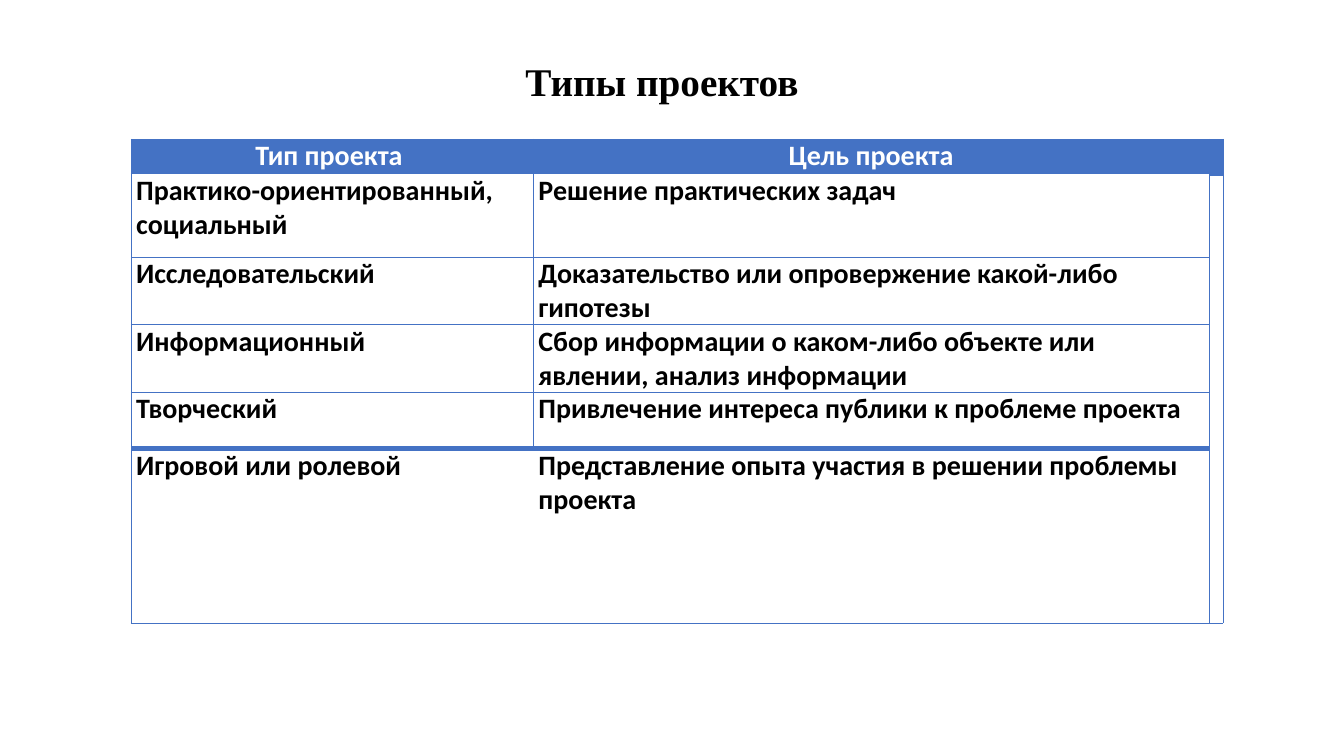
from dataclasses import dataclass

from lxml import etree
from pptx import Presentation, util as u
from pptx.dml.color import RGBColor
from pptx.enum import text
from pptx.oxml import ns


@dataclass(frozen=True)
class Theme:
    blue: str = "4472C4"
    white: str = "FFFFFF"
    black: str = "000000"
    head: str = "Times New Roman"
    body: str = "Calibri"
    big: int = 28
    small: int = 20
    thin: float = 0.5
    thick: float = 4


THEME = Theme()
WIDE, HIGH = 13.33, 7.5
COLS = (3.99, 6.7, 0.14)
ROWS = (0.34, 0.83, 0.67, 0.67, 0.56, 1.73)
TYPES = (
    ("Тип проекта ", "Цель проекта"),
    ("Практико-ориентированный, социальный", "Решение практических задач"),
    ("Исследовательский", "Доказательство или опровержение какой-либо гипотезы"),
    ("Информационный",
     "Сбор информации о каком-либо объекте или явлении, анализ информации"),
    ("Творческий", "Привлечение интереса публики к проблеме проекта"),
    ("Игровой или ролевой",
     "Представление опыта участия в решении проблемы проекта"),
)


def style(para, font, size, color, align):
    para.alignment = align
    for run in para.runs:
        run.font.name = font
        run.font.size = u.Pt(size)
        run.font.bold = True
        run.font.color.rgb = RGBColor.from_string(color)


def edge(cell, **sides):
    """Draw cell borders; a width of 0 hides that side."""
    props = cell._tc.get_or_add_tcPr()
    for spot, side in enumerate("LRTB"):
        width = sides.get(side, THEME.thin)
        line = etree.Element(ns.qn(f"a:ln{side}"), w=str(u.Pt(width)))
        if width:
            fill = etree.SubElement(line, ns.qn("a:solidFill"))
            etree.SubElement(fill, ns.qn("a:srgbClr"), val=THEME.blue)
        else:
            etree.SubElement(line, ns.qn("a:noFill"))
        props.insert(spot, line)


def title(slide, box):
    shape = slide.shapes.add_textbox(*map(u.Inches, box))
    frame = shape.text_frame
    frame.word_wrap = True
    frame.margin_left = u.Inches(0.6)
    frame.margin_top = u.Inches(0.37)
    frame.text = "Типы проектов"
    para = frame.paragraphs[0]
    para.line_spacing = 1.07
    style(para, THEME.head, THEME.big, THEME.black, text.PP_ALIGN.CENTER)


def paint(cell, top):
    cell.margin_left = cell.margin_right = u.Inches(0.05)
    cell.margin_top = cell.margin_bottom = 0
    if top:
        cell.fill.solid()
        cell.fill.fore_color.rgb = RGBColor.from_string(THEME.blue)
    else:
        cell.fill.background()


def grid(slide, box):
    frame = slide.shapes.add_table(len(ROWS), len(COLS), *map(u.Inches, box))
    table = frame.table
    table.horz_banding = False
    for col, size in zip(table.columns, COLS):
        col.width = u.Inches(size)
    for row, size in zip(table.rows, ROWS):
        row.height = u.Inches(size)

    last = len(ROWS) - 1
    for r, words in enumerate(TYPES):
        for c in range(len(COLS)):
            cell = table.cell(r, c)
            paint(cell, r == 0)
            sides = {}
            if r == last and c < 2:
                sides = {"T": THEME.thick, "R" if c == 0 else "L": 0}
            elif r == last - 1 and c < 2:
                sides = {"B": THEME.thick}
            elif r == 1 and c == 2:
                sides = {"T": THEME.thick}
            edge(cell, **sides)
            if c < len(words):
                cell.text_frame.text = words[c]
                color = THEME.black if r else THEME.white
                align = text.PP_ALIGN.LEFT if r else text.PP_ALIGN.CENTER
                style(cell.text_frame.paragraphs[0], THEME.body, THEME.small,
                      color, align)
    table.cell(1, 2).merge(table.cell(last, 2))


def main():
    deck = Presentation()
    deck.slide_width, deck.slide_height = u.Inches(WIDE), u.Inches(HIGH)
    slide = deck.slides.add_slide(deck.slide_layouts[6])
    title(slide, (1.33, 0.17, 9.97, 0.89))
    grid(slide, (1.3, 1.38, sum(COLS), sum(ROWS)))
    deck.save("out.pptx")


if __name__ == "__main__":
    main()
